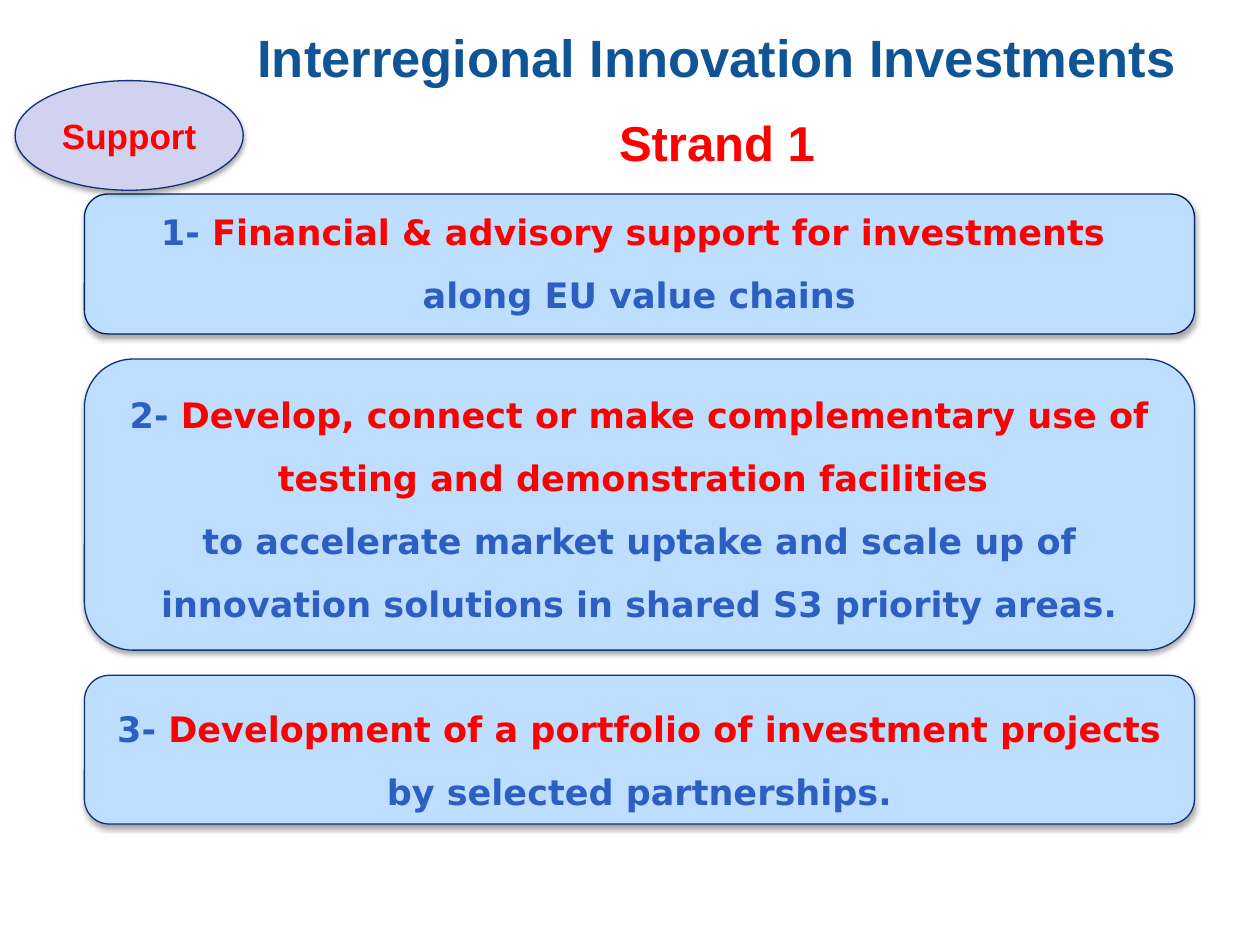
from pptx import Presentation
from pptx.dml.color import RGBColor
from pptx.enum.shapes import MSO_SHAPE
from pptx.enum.text import MSO_ANCHOR, PP_ALIGN
from pptx.oxml import parse_xml
from pptx.oxml.ns import nsdecls, qn
from pptx.util import Inches, Pt

ROUND, OVAL = MSO_SHAPE.ROUNDED_RECTANGLE, MSO_SHAPE.OVAL
MIDDLE, CENTER = MSO_ANCHOR.MIDDLE, PP_ALIGN.CENTER
RED, BLUE, NAVY, TITLE = "FF0000", "2D5EC1", "133176", "0F5494"
SHADOW = (
    f'<a:outerShdw {nsdecls("a")} blurRad="{Pt(3.1)}" dist="{Pt(1.8)}" '
    'dir="5400000" rotWithShape="0"><a:srgbClr val="000000"><a:alpha val="35000"/>'
    '</a:srgbClr></a:outerShdw>'
)


def rgb(value):
    return RGBColor.from_string(value)


class Deck:
    """Holds the style and the current slide."""

    def __init__(self):
        self.prs = Presentation()
        self.prs.slide_width, self.prs.slide_height = Inches(10), Inches(7.5)
        self.s = self.prs.slides.add_slide(self.prs.slide_layouts[6])

    def add_text(self, tf, paragraphs, font, spacing=1, before=0):
        tf.word_wrap = True
        for i, runs in enumerate(paragraphs):
            p = tf.add_paragraph() if i else tf.paragraphs[0]
            p.alignment, p.line_spacing = CENTER, spacing
            if i:
                p.space_before = Pt(before)
            for text, size, color in runs:
                r = p.add_run()
                r.text = text
                r.font.name, r.font.size, r.font.bold = font, Pt(size), True
                r.font.color.rgb = rgb(color)

    def shape(self, kind, box, fill, line):
        sp = self.s.shapes.add_shape(kind, *map(Inches, box))
        sp.fill.solid()
        sp.fill.fore_color.rgb = rgb(fill)
        sp.line.color.rgb = rgb(line)
        sp.line.width = Pt(0.75)
        sp.shadow.inherit = False
        sp.element.spPr.find(qn("a:effectLst")).append(parse_xml(SHADOW))
        sp.text_frame.vertical_anchor = MIDDLE
        return sp.text_frame

    def card(self, top, height, paragraphs, line=NAVY, inset_top=0.05, inset_bottom=0.05):
        tf = self.shape(ROUND, (0.67, top, 8.81, height), "BDDEFF", line)
        tf.margin_top, tf.margin_bottom = Inches(inset_top), Inches(inset_bottom)
        runs = [[(text, 20, color) for text, color in p] for p in paragraphs]
        self.add_text(tf, runs, "DejaVu Sans", spacing=1.5)

    def badge(self, box, text):
        tf = self.shape(OVAL, box, "D1D1F0", NAVY)
        self.add_text(tf, [[(text, 20, RED)]], "Arial")

    def heading(self, box, title, subtitle):
        tf = self.s.shapes.add_textbox(*map(Inches, box)).text_frame
        self.add_text(tf, [[(title, 30, TITLE)], [(subtitle, 28, RED)]], "Arial", before=14)


def main():
    deck = Deck()
    deck.heading((1.77, 0.15, 7.84, 0.72), "Interregional Innovation Investments", "Strand 1")
    deck.card(1.54, 1.11, [
        [("1-", BLUE), (" Financial & advisory support for investments ", RED)],
        [("along EU value chains", BLUE)],
    ], line="002060", inset_top=0, inset_bottom=0.19)
    deck.card(2.85, 2.31, [
        [("2- ", BLUE), ("Develop, connect or make complementary use of "
                         "testing and demonstration facilities ", RED)],
        [("to accelerate market uptake and scale up of "
          "innovation solutions in shared S3 priority areas.", BLUE)],
    ], inset_bottom=0.15)
    deck.card(5.36, 1.18, [
        [("3- ", BLUE), ("Development of a portfolio of investment projects", RED),
         (" by selected partnerships.", BLUE)],
    ])
    deck.badge((0.12, 0.64, 1.81, 0.87), "Support")
    deck.prs.save("out.pptx")


if __name__ == "__main__":
    main()
